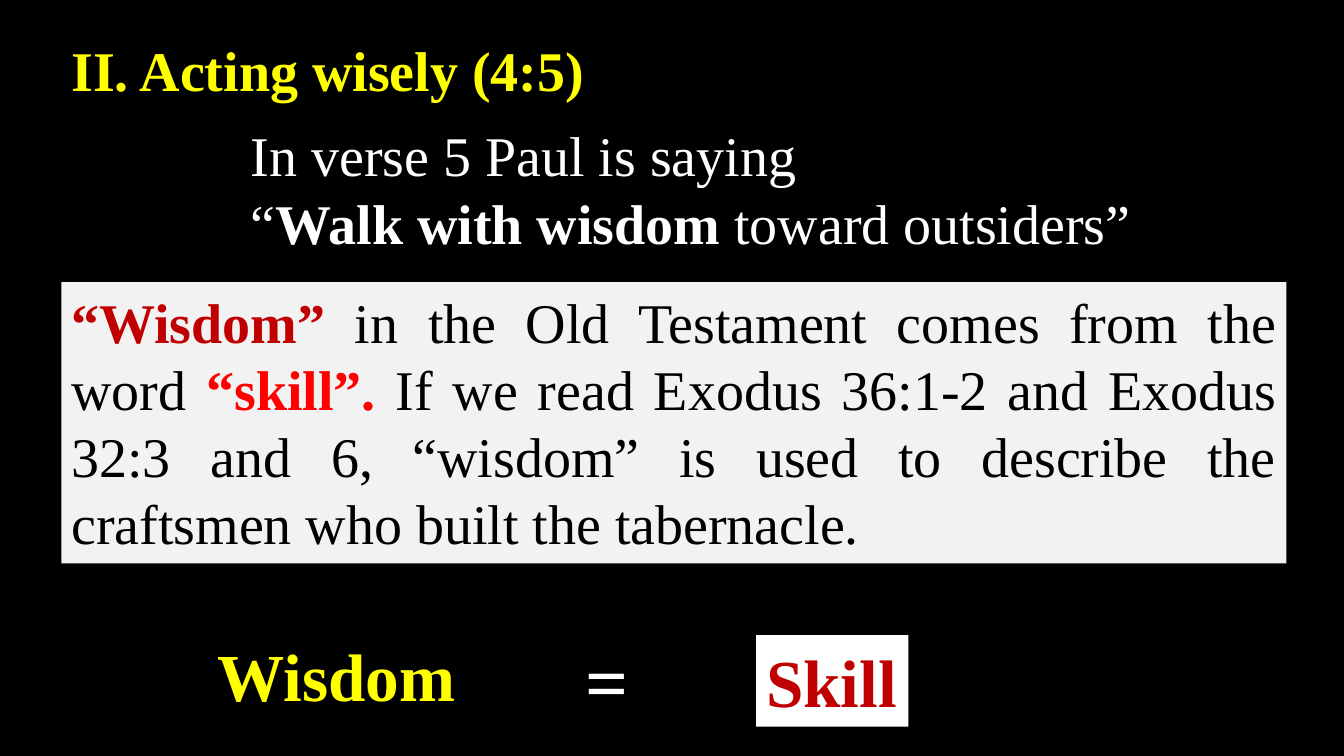
from pptx import Presentation
from pptx.dml.color import RGBColor
from pptx.enum import shapes, text
from pptx.util import Inches, Pt

FONT = "Times New Roman"
BLACK, WHITE, YELLOW = "000000", "FFFFFF", "FFFF00"
GREY, DARK_RED, RED = "F2F2F2", "C00000", "FF0000"

# Content: place, size, wrap, fill, paragraphs of (text, colour, bold)
BLOCKS = [
    ((0.61, 0.3, 5.49, 0.77), 40, False, None,
     [[("II. Acting wisely (4:5)", YELLOW, True)]]),
    ((2.39, 1.15, 9.03, 1.45), 40, False, None,
     [[("In verse 5 Paul is saying", WHITE, False)],
      [("“", WHITE, False),
       ("Walk with wisdom ", WHITE, True),
       ("toward outsiders”", WHITE, False)]]),
    ((0.61, 2.8, 12.15, 2.79), 40, True, GREY,
     [[("“Wisdom” ", DARK_RED, True),
       ("in the Old Testament comes from the word ", BLACK, False),
       ("“skill”. ", RED, True),
       ("If we read Exodus 36:1-2 and Exodus 32:3 and 6, “wisdom” is used "
        "to describe the craftsmen who built the tabernacle.", BLACK, False)]]),
    ((2.06, 6.24, 2.59, 0.91), 48, False, None, [[("Wisdom", YELLOW, True)]]),
    ((5.71, 6.24, 0.63, 1.01), 54, False, None, [[("=", WHITE, True)]]),
    ((7.5, 6.3, 1.51, 0.91), 48, False, WHITE, [[("Skill", DARK_RED, True)]]),
]


def paint(fill, colour):
    fill.solid()
    fill.fore_color.rgb = RGBColor.from_string(colour)


def add_block(page, place, size, wrap, fill, paragraphs):
    area = [Inches(value) for value in place]
    if fill:
        box = page.shapes.add_shape(shapes.MSO_SHAPE.RECTANGLE, *area)
        box.shadow.inherit = False
        box.line.fill.background()
        paint(box.fill, fill)
    else:
        box = page.shapes.add_textbox(*area)
    frame = box.text_frame
    frame.word_wrap = wrap
    frame.auto_size = text.MSO_AUTO_SIZE.SHAPE_TO_FIT_TEXT
    frame.vertical_anchor = text.MSO_ANCHOR.TOP
    for index, spans in enumerate(paragraphs):
        para = frame.add_paragraph() if index else frame.paragraphs[0]
        para.alignment = text.PP_ALIGN.JUSTIFY if wrap else text.PP_ALIGN.LEFT
        for words, colour, bold in spans:
            span = para.add_run()
            span.text = words
            span.font.name = FONT
            span.font.size = Pt(size)
            span.font.bold = bold
            paint(span.font.fill, colour)


def main():
    deck = Presentation()
    deck.slide_width, deck.slide_height = Inches(13.33), Inches(7.5)
    page = deck.slides.add_slide(deck.slide_layouts[6])
    paint(page.background.fill, BLACK)
    for block in BLOCKS:
        add_block(page, *block)
    deck.save("out.pptx")


if __name__ == "__main__":
    main()
